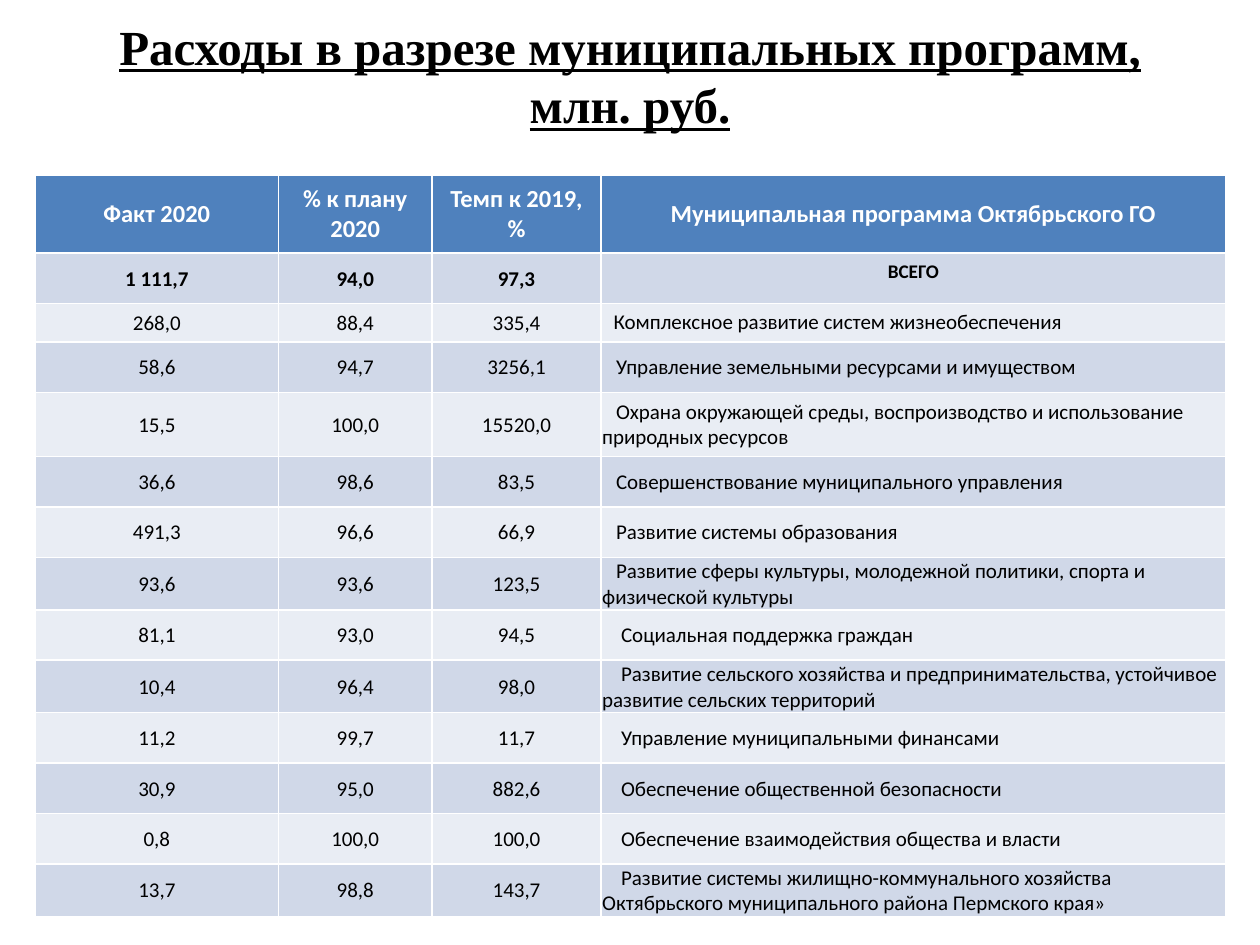
from pptx import Presentation
from pptx.dml.color import RGBColor
from pptx.enum import text as t
from pptx.util import Inches, Pt

# Content
TITLE = "Расходы в разрезе муниципальных программ, млн. руб."
HEADER = ("Факт 2020", "% к плану 2020", "Темп к 2019, %",
          "Муниципальная программа Октябрьского ГО")
TOTAL = ("1 111,7", "94,0", "97,3", "ВСЕГО")
PROGRAMS = [
    ("268,0", "88,4", "335,4", "Комплексное развитие систем жизнеобеспечения"),
    ("58,6", "94,7", "3256,1", "Управление земельными ресурсами и имуществом"),
    ("15,5", "100,0", "15520,0",
     "Охрана окружающей среды, воспроизводство и использование природных ресурсов"),
    ("36,6", "98,6", "83,5", "Совершенствование муниципального управления"),
    ("491,3", "96,6", "66,9", "Развитие системы образования"),
    ("93,6", "93,6", "123,5",
     "Развитие сферы культуры, молодежной политики, спорта и физической культуры"),
    ("81,1", "93,0", "94,5", "Социальная поддержка граждан"),
    ("10,4", "96,4", "98,0",
     "Развитие сельского хозяйства и предпринимательства, устойчивое развитие сельских территорий"),
    ("11,2", "99,7", "11,7", "Управление муниципальными финансами"),
    ("30,9", "95,0", "882,6", "Обеспечение общественной безопасности"),
    ("0,8", "100,0", "100,0", "Обеспечение взаимодействия общества и власти"),
    ("13,7", "98,8", "143,7",
     "Развитие системы жилищно-коммунального хозяйства Октябрьского муниципального района Пермского края»"),
]
ROWS = [HEADER, TOTAL, *PROGRAMS]
FIRST_PROGRAM = 2
NAME_COL = len(HEADER) - 1

# Theme and grid (inches)
THEME = {
    "title_font": "Times New Roman", "font": "Calibri",
    "title": 28, "header": 14, "body": 12, "total_label": 11,
    "ink": "000000", "header_ink": "FFFFFF", "header_fill": "4F81BD",
    "bands": ("D0D8E8", "E9EDF4"),
}
COLUMNS = (1.93, 1.22, 1.34, 4.96)
ROW_HEIGHT, TWO_LINE_HEIGHT = 0.4, 0.41
SPECIAL_HEIGHTS = {0: 0.62, 2: 0.3, 4: 0.51}
TWO_LINE_LENGTH = 70


def row_height(index):
    usual = TWO_LINE_HEIGHT if len(ROWS[index][NAME_COL]) > TWO_LINE_LENGTH else ROW_HEIGHT
    return SPECIAL_HEIGHTS.get(index, usual)


def style(paragraph, font, size, color, bold, underline=False):
    paragraph.alignment = t.PP_ALIGN.CENTER
    for run in paragraph.runs:
        run.font.name, run.font.size = font, Pt(size)
        run.font.bold, run.font.underline = bold, underline
        run.font.color.rgb = RGBColor.from_string(color)


def fill_cell(cell, row, col, value):
    header, total, name = row == 0, row == 1, col == NAME_COL
    # The total label and the first program name keep the wide default margins
    wide = header or (name and row <= FIRST_PROGRAM)
    cell.text_frame.text = value
    cell.vertical_anchor = (t.MSO_ANCHOR.TOP if wide and not header
                            else t.MSO_ANCHOR.MIDDLE)
    if not wide:
        cell.margin_left = cell.margin_right = cell.margin_top = Inches(0.01)
        cell.margin_bottom = 0
    cell.fill.solid()
    cell.fill.fore_color.rgb = RGBColor.from_string(
        THEME["header_fill"] if header else THEME["bands"][(row - 1) % 2])

    size = "header" if header else "total_label" if total and name else "body"
    paragraph = cell.text_frame.paragraphs[0]
    style(paragraph, THEME["font"], THEME[size],
          THEME["header_ink" if header else "ink"], header or total)
    if name and row >= FIRST_PROGRAM:
        paragraph.alignment = t.PP_ALIGN.LEFT
        if not wide:
            indent = 0.11 if row < 8 else 0.15
            paragraph._p.get_or_add_pPr().set("indent", str(Inches(indent)))


def main():
    deck = Presentation()
    deck.slide_width, deck.slide_height = Inches(10), Inches(7.5)
    slide = deck.slides.add_slide(deck.slide_layouts[5])

    # Title
    title = slide.shapes.title
    title.left, title.top, title.width, title.height = map(Inches, (0.5, 0.13, 9, 0.93))
    frame = title.text_frame
    frame.text = TITLE
    frame.word_wrap = True
    frame.auto_size = t.MSO_AUTO_SIZE.NONE
    frame.vertical_anchor = t.MSO_ANCHOR.MIDDLE
    style(frame.paragraphs[0], THEME["title_font"], THEME["title"], THEME["ink"], True, True)

    # Expenses table
    heights = [row_height(i) for i in range(len(ROWS))]
    expenses = slide.shapes.add_table(
        len(ROWS), len(COLUMNS), Inches(0.28), Inches(1.39),
        Inches(sum(COLUMNS)), Inches(sum(heights))).table
    for column, width in zip(expenses.columns, COLUMNS):
        column.width = Inches(width)
    for r, values in enumerate(ROWS):
        expenses.rows[r].height = Inches(heights[r])
        for c, value in enumerate(values):
            fill_cell(expenses.cell(r, c), r, c, value)

    deck.save("out.pptx")


if __name__ == "__main__":
    main()
